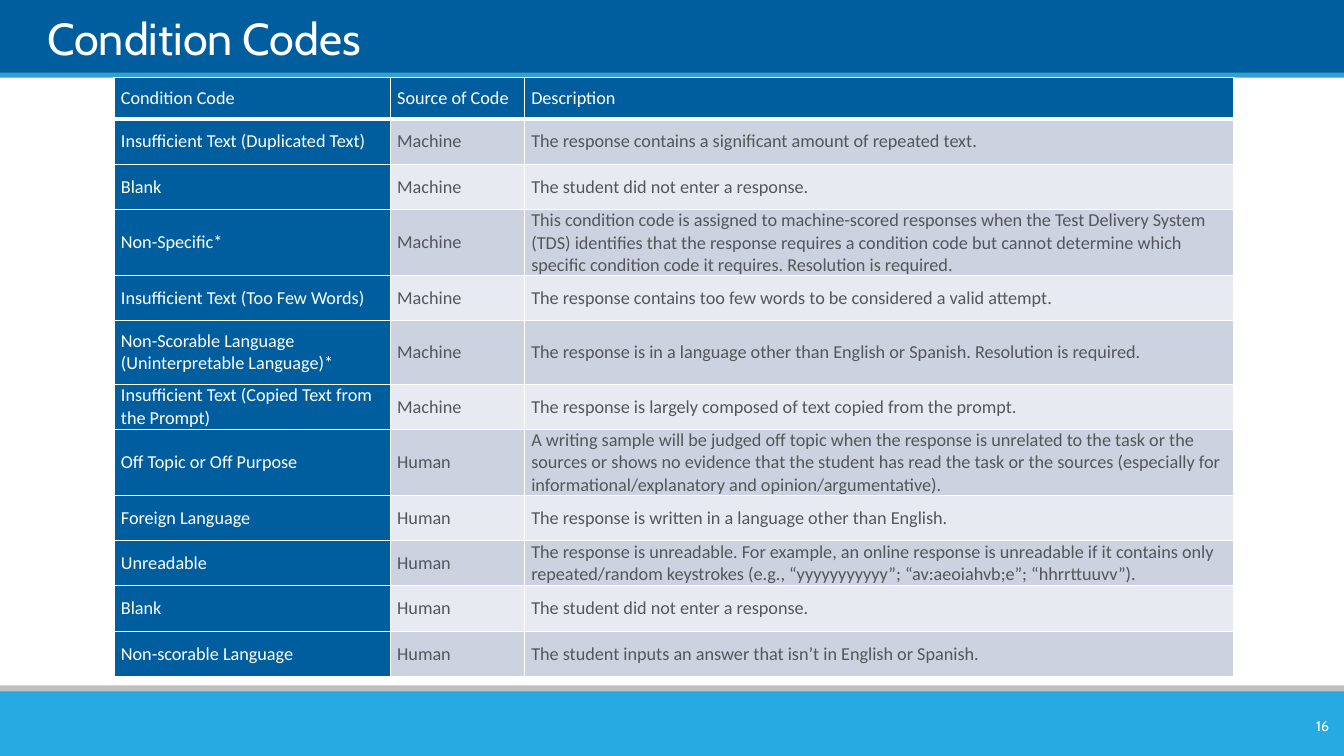
"""Build the Condition Codes slide with its table of scoring codes."""
from typing import NamedTuple

from lxml import etree
from pptx import Presentation
from pptx.dml.color import RGBColor
from pptx.enum.shapes import MSO_SHAPE
from pptx.enum.text import MSO_ANCHOR, PP_ALIGN
from pptx.oxml.ns import qn
from pptx.util import Inches, Pt

RECTANGLE = MSO_SHAPE.RECTANGLE
MIDDLE, BOTTOM = MSO_ANCHOR.MIDDLE, MSO_ANCHOR.BOTTOM
LEFT, RIGHT = PP_ALIGN.LEFT, PP_ALIGN.RIGHT
NAVY, WHITE, GRAY = "005E9E", "FFFFFF", "53565A"
ROW_FILLS = ("CCD2DF", "E7EAF0")
SLIDE_WIDTH = 13.33
COLUMN_WIDTHS = (2.74, 1.33, 7.04)
HEADER_HEIGHT = 0.41
SHORT, TALL = 0.45, 0.63
HEADINGS = ("Condition Code", "Source of Code", "Description")


class Band(NamedTuple):
    top: float
    height: float
    color: str


class Label(NamedTuple):
    text: str
    left: float
    top: float
    width: float
    height: float
    size: int
    anchor: MSO_ANCHOR
    align: PP_ALIGN
    margins: tuple[float, float]


class Code(NamedTuple):
    name: str
    source: str
    description: str
    height: float = SHORT


BANDS = (
    Band(-0.01, 0.75, NAVY),
    Band(0.72, 0.05, "35A0CE"),
    Band(6.8, 0.14, "BFBFBF"),
    Band(6.86, 0.64, "27AAE1"),
)
LABELS = (
    Label("Condition Codes", 0.47, 0.07, 12.43, 0.57, 32, BOTTOM, LEFT, (0, 0)),
    Label("16", 12.51, 7.05, 0.77, 0.3, 10, MIDDLE, RIGHT, (0.1, 0.05)),
)
CODES = (
    Code("Insufficient Text (Duplicated Text)", "Machine",
         "The response contains a significant amount of repeated text."),
    Code("Blank", "Machine", "The student did not enter a response."),
    Code("Non-Specific*", "Machine",
         "This condition code is assigned to machine-scored responses when the Test "
         "Delivery System (TDS) identifies that the response requires a condition code "
         "but cannot determine which specific condition code it requires. "
         "Resolution is required.", TALL),
    Code("Insufficient Text (Too Few Words)", "Machine",
         "The response contains too few words to be considered a valid attempt."),
    Code("Non-Scorable Language (Uninterpretable Language)*", "Machine",
         "The response is in a language other than English or Spanish. "
         "Resolution is required.", TALL),
    Code("Insufficient Text (Copied Text from the Prompt)", "Machine",
         "The response is largely composed of text copied from the prompt."),
    Code("Off Topic or Off Purpose", "Human",
         "A writing sample will be judged off topic when the response is unrelated to "
         "the task or the sources or shows no evidence that the student has read the "
         "task or the sources (especially for informational/explanatory and "
         "opinion/argumentative).", TALL),
    Code("Foreign Language", "Human",
         "The response is written in a language other than English."),
    Code("Unreadable", "Human",
         "The response is unreadable. For example, an online response is unreadable if "
         "it contains only repeated/random keystrokes (e.g., “yyyyyyyyyyy”; "
         "“av:aeoiahvb;e”; “hhrrttuuvv”)."),
    Code("Blank", "Human", "The student did not enter a response."),
    Code("Non-scorable Language", "Human",
         "The student inputs an answer that isn’t in English or Spanish."),
)


def rgb(color: str) -> RGBColor:
    return RGBColor.from_string(color)


def style_font(font, name: str, size: int, color: str) -> None:
    font.name = name
    font.size = Pt(size)
    font.bold = False
    font.color.rgb = rgb(color)


def draw_band(page, band: Band) -> None:
    shape = page.shapes.add_shape(RECTANGLE, 0, Inches(band.top),
                                  Inches(SLIDE_WIDTH), Inches(band.height))
    shape.shadow.inherit = False
    shape.fill.solid()
    shape.fill.fore_color.rgb = rgb(band.color)
    shape.line.fill.background()


def draw_label(page, label: Label) -> None:
    box = page.shapes.add_textbox(Inches(label.left), Inches(label.top),
                                  Inches(label.width), Inches(label.height))
    frame = box.text_frame
    frame.word_wrap = True
    frame.vertical_anchor = label.anchor
    side, end = label.margins
    frame.margin_left = frame.margin_right = Inches(side)
    frame.margin_top = frame.margin_bottom = Inches(end)
    para = frame.paragraphs[0]
    para.text = label.text
    para.alignment = label.align
    style_font(para.font, "Cabin", label.size, WHITE)


def draw_borders(cell, bottom: int) -> None:
    properties = cell._tc.get_or_add_tcPr()
    for side, width in (("L", 1), ("R", 1), ("T", 1), ("B", bottom)):
        line = etree.SubElement(properties, qn(f"a:ln{side}"), w=str(Pt(width)))
        fill = etree.SubElement(line, qn("a:solidFill"))
        etree.SubElement(fill, qn("a:srgbClr"), val=WHITE)


def fill_cell(cell, text: str, fill: str, color: str, bottom: int) -> None:
    draw_borders(cell, bottom)
    cell.fill.solid()
    cell.fill.fore_color.rgb = rgb(fill)
    cell.vertical_anchor = MIDDLE
    cell.margin_left = cell.margin_right = Inches(0.07)
    cell.margin_top = cell.margin_bottom = 0
    para = cell.text_frame.paragraphs[0]
    para.text = text
    style_font(para.font, "Calibri", 13, color)


def draw_codes(page) -> None:
    rows = [Code(*HEADINGS, HEADER_HEIGHT), *CODES]
    table = page.shapes.add_table(
        len(rows), len(COLUMN_WIDTHS), Inches(1.13), Inches(0.77),
        Inches(sum(COLUMN_WIDTHS)), Inches(sum(row.height for row in rows))).table
    for column, width in zip(table.columns, COLUMN_WIDTHS):
        column.width = Inches(width)
    for row_index, row in enumerate(rows):
        table.rows[row_index].height = Inches(row.height)
        is_header = row_index == 0
        for column_index, text in enumerate((row.name, row.source, row.description)):
            is_heading = is_header or column_index == 0
            fill = NAVY if is_heading else ROW_FILLS[(row_index - 1) % 2]
            fill_cell(table.cell(row_index, column_index), text, fill,
                      WHITE if is_heading else GRAY, 3 if is_header else 1)


def main() -> None:
    deck = Presentation()
    deck.slide_width, deck.slide_height = Inches(SLIDE_WIDTH), Inches(7.5)
    page = deck.slides.add_slide(deck.slide_layouts[6])
    for band in BANDS:
        draw_band(page, band)
    for label in LABELS:
        draw_label(page, label)
    draw_codes(page)
    deck.save("out.pptx")


if __name__ == "__main__":
    main()
